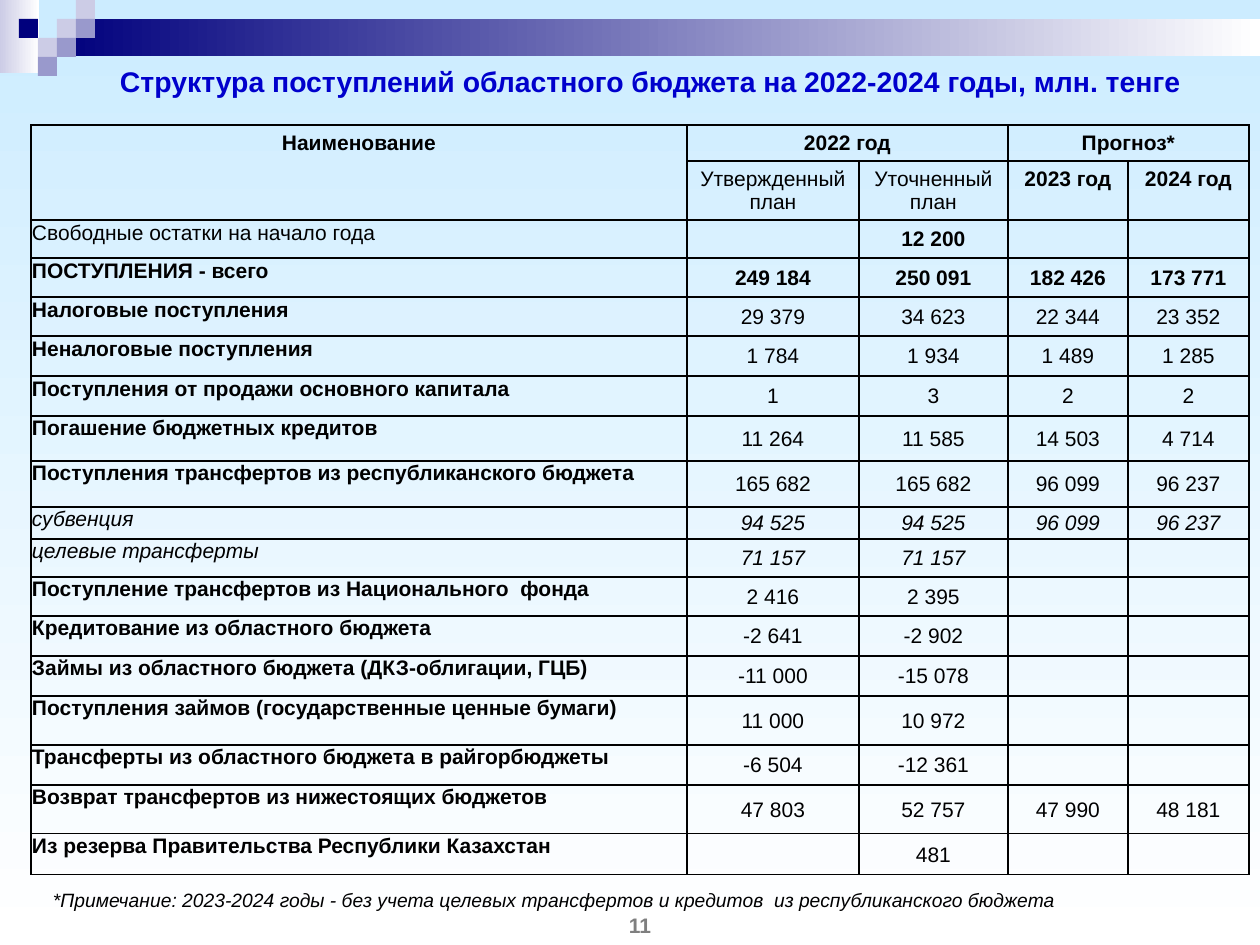
from dataclasses import dataclass

from lxml import etree
from pptx import Presentation
from pptx import util as u
from pptx.dml.color import RGBColor
from pptx.enum import shapes, text
from pptx.oxml.ns import qn

PX = 914400 // 126
FONT = "Arial"
NAVY = RGBColor(0x00, 0x00, 0x7D)
BLUE = RGBColor(0x00, 0x00, 0xCC)
LILAC = RGBColor(0xCC, 0xCC, 0xE6)
VIOLET = RGBColor(0x99, 0x99, 0xCC)
SKY = RGBColor(0xCC, 0xEC, 0xFF)
WHITE = RGBColor(0xFF, 0xFF, 0xFF)
BLACK = RGBColor(0x00, 0x00, 0x00)
GRAY = RGBColor(0x7F, 0x7F, 0x7F)
LEFT, CENTER = text.PP_ALIGN.LEFT, text.PP_ALIGN.CENTER
TOP, MIDDLE = text.MSO_ANCHOR.TOP, text.MSO_ANCHOR.MIDDLE


@dataclass
class Block:
    x: int
    y: int
    w: int
    h: int
    colors: tuple


@dataclass
class Row:
    label: str
    values: tuple
    h: int
    label_fmt: dict
    value_fmt: dict


PLAIN, BOLD, ITALIC = {"bold": False}, {"bold": True}, {"bold": False, "italic": True}
STEP = 19
SQUARES = [(3, 1, LILAC), (4, 0, LILAC), (4, 1, VIOLET), (2, 2, LILAC),
           (1, 1, NAVY), (3, 2, VIOLET), (2, 3, VIOLET)]
BLOCKS = [Block(0, 0, 39, 73, (LILAC, WHITE)), Block(57, 19, 1203, 37, (NAVY, WHITE))]
BLOCKS += [Block(c * STEP, r * STEP, STEP, STEP, (color,)) for c, r, color in SQUARES]

COLUMNS = [656, 172, 149, 120, 121]
HEADER_HEIGHTS = [36, 59]
HEADERS = [
    (0, 0, 1, 0, "Наименование", BOLD),
    (0, 1, 0, 2, "2022 год", BOLD),
    (0, 3, 0, 4, "Прогноз*", BOLD),
    (1, 1, 1, 1, "Утвержденный план", PLAIN),
    (1, 2, 1, 2, "Уточненный план", PLAIN),
    (1, 3, 1, 3, "2023 год", BOLD),
    (1, 4, 1, 4, "2024 год", BOLD),
]
ROWS = [
    Row("Свободные остатки на начало года", ("", "12 200"), 38, PLAIN, BOLD),
    Row("ПОСТУПЛЕНИЯ - всего", ("249 184", "250 091", "182 426", "173 771"), 39, BOLD, BOLD),
    Row("Налоговые поступления", ("29 379", "34 623", "22 344", "23 352"), 39, BOLD, PLAIN),
    Row("Неналоговые поступления", ("1 784", "1 934", "1 489", "1 285"), 40, BOLD, PLAIN),
    Row("Поступления от продажи основного капитала", ("1", "3", "2", "2"), 40, BOLD, PLAIN),
    Row("Погашение бюджетных кредитов", ("11 264", "11 585", "14 503", "4 714"), 45, BOLD, PLAIN),
    Row("Поступления трансфертов из республиканского бюджета",
        ("165 682", "165 682", "96 099", "96 237"), 46, BOLD, PLAIN),
    Row("субвенция", ("94 525", "94 525", "96 099", "96 237"), 32, ITALIC, ITALIC),
    Row("целевые трансферты", ("71 157", "71 157"), 38, ITALIC, ITALIC),
    Row("Поступление трансфертов из Национального  фонда", ("2 416", "2 395"), 39, BOLD, PLAIN),
    Row("Кредитование из областного бюджета", ("-2 641", "-2 902"), 40, BOLD, PLAIN),
    Row("Займы из областного бюджета (ДКЗ-облигации, ГЦБ)", ("-11 000", "-15 078"), 40, BOLD, PLAIN),
    Row("Поступления займов (государственные ценные бумаги)", ("11 000", "10 972"), 49, BOLD, PLAIN),
    Row("Трансферты из областного бюджета в райгорбюджеты", ("-6 504", "-12 361"), 40, BOLD, PLAIN),
    Row("Возврат трансфертов из нижестоящих бюджетов",
        ("47 803", "52 757", "47 990", "48 181"), 49, BOLD, PLAIN),
    Row("Из резерва Правительства Республики Казахстан", ("", "481"), 41, BOLD, PLAIN),
]


def px(*values: int) -> list:
    return [u.Emu(v * PX) for v in values]


def set_attrs(obj, values: dict) -> None:
    for name, value in values.items():
        setattr(obj, name, value)


def set_margins(obj, left: int, top: int, right: int, bottom: int) -> None:
    names = ("margin_left", "margin_top", "margin_right", "margin_bottom")
    set_attrs(obj, dict(zip(names, px(left, top, right, bottom))))


def set_gradient(fill, colors: tuple, angle: int) -> None:
    fill.gradient()
    fill.gradient_angle = angle
    for stop, color in zip(fill.gradient_stops, colors):
        stop.color.rgb = color


def write(tf, content: str, size: float, color: RGBColor, align, fmt: dict) -> None:
    p = tf.paragraphs[0]
    p.alignment = align
    r = p.add_run()
    r.text = content
    set_attrs(r.font, {"name": FONT, "size": u.Pt(size), **fmt})
    r.font.color.rgb = color


def draw_block(slide, block: Block) -> None:
    sp = slide.shapes.add_shape(shapes.MSO_SHAPE.RECTANGLE, *px(block.x, block.y, block.w, block.h))
    sp.shadow.inherit = False
    sp.line.fill.background()
    if len(block.colors) > 1:
        set_gradient(sp.fill, block.colors, 0)
    else:
        sp.fill.solid()
        sp.fill.fore_color.rgb = block.colors[0]


def style_cell(cell) -> None:
    tc_pr = cell._tc.get_or_add_tcPr()
    for side in ("lnL", "lnR", "lnT", "lnB"):
        ln = etree.SubElement(tc_pr, qn(f"a:{side}"), w=str(u.Pt(1)))
        fill = etree.SubElement(ln, qn("a:solidFill"))
        etree.SubElement(fill, qn("a:srgbClr"), val=str(BLACK))
    cell.fill.background()
    set_margins(cell, 1, 1, 1, 0)
    p = cell.text_frame.paragraphs[0]._p
    etree.SubElement(p, qn("a:endParaRPr"), sz="1200")


def draw_table(slide) -> None:
    heights = HEADER_HEIGHTS + [row.h for row in ROWS]
    frame = slide.shapes.add_table(len(heights), len(COLUMNS),
                                   *px(31, 125, sum(COLUMNS), sum(heights)))
    table = frame.table
    set_attrs(table, {"first_row": False, "horz_banding": False})
    for column, width in zip(table.columns, px(*COLUMNS)):
        column.width = width
    for row, height in zip(table.rows, px(*heights)):
        row.height = height
    for cell in table.iter_cells():
        style_cell(cell)
    for top, left, bottom, right, label, fmt in HEADERS:
        cell = table.cell(top, left)
        if (top, left) != (bottom, right):
            cell.merge(table.cell(bottom, right))
        set_margins(cell, 12, 6, 12, 4)
        write(cell.text_frame, label, 12, BLACK, CENTER, fmt)
    for i, row in enumerate(ROWS, len(HEADER_HEIGHTS)):
        write(table.cell(i, 0).text_frame, row.label, 12, BLACK, LEFT, row.label_fmt)
        for j, value in enumerate(row.values, 1):
            if value:
                cell = table.cell(i, j)
                cell.vertical_anchor = MIDDLE
                write(cell.text_frame, value, 12, BLACK, CENTER, row.value_fmt)


def draw_text(slide, box: tuple, content: str, size: float, color: RGBColor,
              align, anchor, fmt: dict) -> None:
    sp = slide.shapes.add_textbox(*px(*box))
    tf = sp.text_frame
    set_attrs(tf, {"word_wrap": True, "vertical_anchor": anchor})
    set_margins(tf, 0, 0, 0, 0)
    write(tf, content, size, color, align, fmt)


def draw_title(slide) -> None:
    sp = slide.shapes.title
    set_attrs(sp, dict(zip(("left", "top", "width", "height"), px(107, 66, 1142, 30))))
    tf = sp.text_frame
    set_attrs(tf, {"word_wrap": True, "vertical_anchor": MIDDLE, "auto_size": text.MSO_AUTO_SIZE.NONE})
    set_margins(tf, 13, 0, 0, 0)
    write(tf, "Структура поступлений областного бюджета на 2022-2024 годы, млн. тенге",
          16.2, BLUE, LEFT, BOLD)


def main() -> None:
    prs = Presentation()
    prs.slide_width, prs.slide_height = px(1260, 945)
    slide = prs.slides.add_slide(prs.slide_layouts[5])
    set_gradient(slide.background.fill, (SKY, WHITE), 270)
    for block in BLOCKS:
        draw_block(slide, block)
    draw_title(slide)
    draw_table(slide)
    draw_text(slide, (53, 888, 1051, 23),
              "*Примечание: 2023-2024 годы - без учета целевых трансфертов и кредитов  из республиканского бюджета",
              11, BLACK, LEFT, TOP, {"italic": True})
    draw_text(slide, (514, 910, 252, 30), "11", 12, GRAY, CENTER, MIDDLE, BOLD)
    prs.save("out.pptx")


if __name__ == "__main__":
    main()
